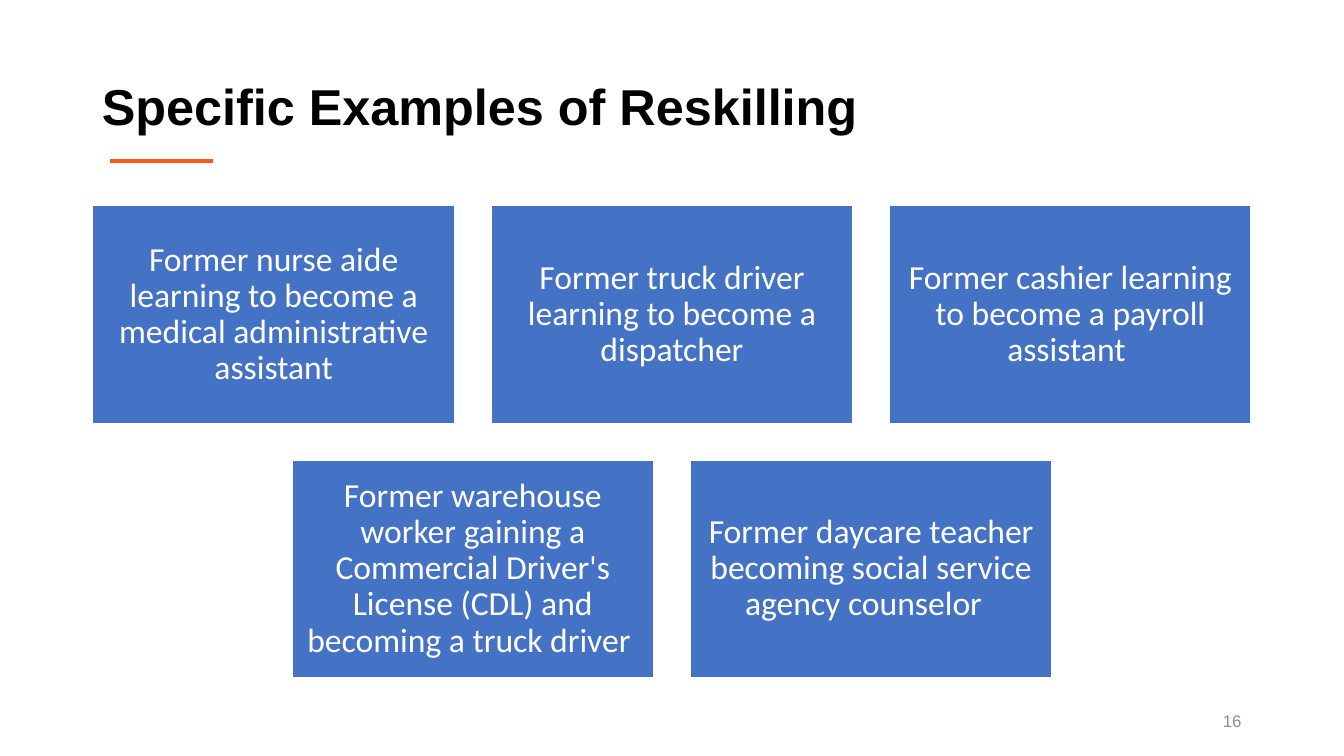
from lxml import etree
from pptx import Presentation
from pptx import util as u
from pptx.dml.color import RGBColor
from pptx.enum import shapes, text
from pptx.oxml import ns

COLORS = {"ink": "000000", "accent": "F75A1C", "card": "4472C4",
          "white": "FFFFFF", "number": "8C8C8C"}

SLIDE_WIDTH, SLIDE_HEIGHT = 960, 540
CARD_WIDTH, CARD_HEIGHT, CARD_GAP = 258.5, 155.5, 26
CARDS_TOP = 147

EXAMPLE_ROWS = [
    ["Former nurse aide learning to become a medical administrative assistant",
     "Former truck driver learning to become a dispatcher",
     "Former cashier learning to become a payroll assistant "],
    ["Former warehouse worker gaining a Commercial Driver's License (CDL) "
     "and becoming a truck driver ",
     "Former daycare teacher becoming social service agency counselor  "],
]


class SlideBuilder:
    """Adds styled elements to one slide; all lengths are in points."""

    def __init__(self, slide):
        self.slide = slide

    def color(self, name):
        return RGBColor.from_string(COLORS[name])

    def set_text(self, shape, content, size, color, font, align,
                 bold=False, spacing=1.0):
        frame = shape.text_frame
        frame.text = content
        frame.word_wrap = True
        frame.auto_size = text.MSO_AUTO_SIZE.NONE
        frame.vertical_anchor = text.MSO_ANCHOR.MIDDLE
        paragraph = frame.paragraphs[0]
        paragraph.alignment = align
        paragraph.line_spacing = spacing
        for run in paragraph.runs:
            run.font.name = font
            run.font.size = u.Pt(size)
            run.font.bold = bold
            run.font.color.rgb = self.color(color)

    def title(self, content, left, top, width, height):
        title = self.slide.shapes.title
        title.left, title.top = u.Pt(left), u.Pt(top)
        title.width, title.height = u.Pt(width), u.Pt(height)
        self.set_text(title, content, 36, "ink", "Arial", text.PP_ALIGN.LEFT,
                      bold=True, spacing=0.9)

    def rule(self, left, right, y):
        line = self.slide.shapes.add_connector(
            shapes.MSO_CONNECTOR.STRAIGHT,
            u.Pt(left), u.Pt(y), u.Pt(right), u.Pt(y))
        line.line.color.rgb = self.color("accent")
        line.line.width = u.Pt(3)
        etree.SubElement(line._element.spPr, ns.qn("a:effectLst"))

    def card(self, content, left, top):
        card = self.slide.shapes.add_shape(
            shapes.MSO_SHAPE.RECTANGLE, u.Pt(left), u.Pt(top),
            u.Pt(CARD_WIDTH), u.Pt(CARD_HEIGHT))
        card.shadow.inherit = False
        card.fill.solid()
        card.fill.fore_color.rgb = self.color("card")
        card.line.color.rgb = self.color("white")
        card.line.width = u.Pt(1)
        frame = card.text_frame
        frame.margin_left = frame.margin_right = u.Pt(7.2)
        frame.margin_top = frame.margin_bottom = u.Pt(7.2)
        self.set_text(card, content, 24, "white", "Calibri",
                      text.PP_ALIGN.CENTER, spacing=0.9)

    def card_row(self, contents, top):
        """Centres a row of equally spaced cards on the slide."""
        pitch = CARD_WIDTH + CARD_GAP
        left = (SLIDE_WIDTH - len(contents) * pitch + CARD_GAP) / 2
        for column, content in enumerate(contents):
            self.card(content, left + column * pitch, top)

    def page_number(self, content, left, top, width, height):
        box = self.slide.shapes.add_textbox(
            u.Pt(left), u.Pt(top), u.Pt(width), u.Pt(height))
        self.set_text(box, content, 12, "number", "Arial",
                      text.PP_ALIGN.RIGHT)


def main():
    presentation = Presentation()
    presentation.slide_width = u.Pt(SLIDE_WIDTH)
    presentation.slide_height = u.Pt(SLIDE_HEIGHT)
    title_only = presentation.slide_layouts[5]
    builder = SlideBuilder(presentation.slides.add_slide(title_only))

    builder.rule(78.5, 152, 115.2)
    builder.title("Specific Examples of Reskilling", 65.5, 40.3, 828, 75.6)
    for row, contents in enumerate(EXAMPLE_ROWS):
        builder.card_row(contents, CARDS_TOP + row * (CARD_HEIGHT + CARD_GAP))
    builder.page_number("16", 678, 500.5, 216, 28.8)

    presentation.save("out.pptx")


if __name__ == "__main__":
    main()
